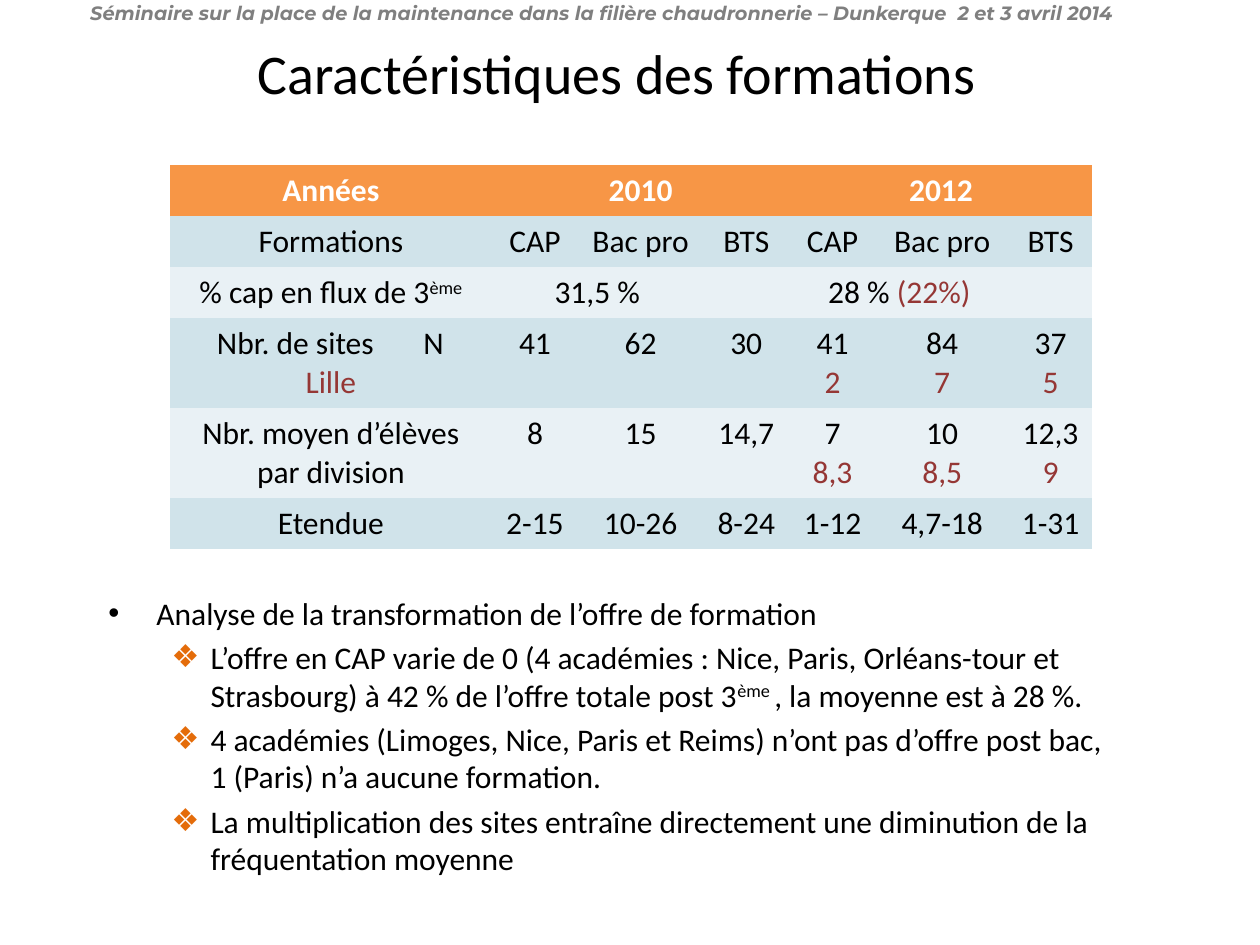
from dataclasses import dataclass

from lxml import etree
from pptx import Presentation
from pptx.dml.color import RGBColor
from pptx.enum.text import MSO_ANCHOR, MSO_AUTO_SIZE, PP_ALIGN
from pptx.oxml.ns import qn
from pptx.util import Cm, Pt

CENTER, LEFT = PP_ALIGN.CENTER, PP_ALIGN.LEFT
TOP, MIDDLE = MSO_ANCHOR.TOP, MSO_ANCHOR.MIDDLE
FIXED = MSO_AUTO_SIZE.NONE
PLAIN_TABLE = "{2D5ABB26-0587-4C30-8999-92F81FD0307C}"

BLACK, WHITE, GREY = "000000", "FFFFFF", "7F7F7F"
RED, ORANGE, BULLET_ORANGE = "953735", "F79646", "E46C0A"
BANDS = ["D0E3EA", "E9F1F5"]


def color(value):
    return RGBColor.from_string(value)


def place(shape, left, top, width, height):
    shape.left, shape.top = Cm(left), Cm(top)
    shape.width, shape.height = Cm(width), Cm(height)


@dataclass
class Span:
    text: str
    color: str = BLACK
    raised: bool = False


@dataclass
class SlideBuilder:
    slide: object
    font: str = "Calibri"
    size: float = 18

    def add_span(self, para, span, size=None, font=None, bold=False, italic=False):
        run = para.add_run()
        run.text = span.text
        run.font.name = font or self.font
        run.font.size = Pt(size or self.size)
        run.font.bold, run.font.italic = bold, italic
        run.font.color.rgb = color(span.color)
        if span.raised:
            run.font._element.set("baseline", "30000")

    def add_banner(self, text, left, top, width, height):
        box = self.slide.shapes.add_textbox(Cm(left), Cm(top), Cm(width), Cm(height))
        box.text_frame.word_wrap = False
        self.add_span(box.text_frame.paragraphs[0], Span(text, GREY),
                      11, "Montserrat", bold=True, italic=True)

    def set_title(self, text, *position):
        title = self.slide.shapes.title
        place(title, *position)
        title.text_frame.auto_size = FIXED
        title.text_frame.vertical_anchor = MIDDLE
        para = title.text_frame.paragraphs[0]
        para.alignment = CENTER
        self.add_span(para, Span(text), 32)

    def set_bullet(self, para, char, margin, hang, bullet_color):
        properties = para._p.get_or_add_pPr()
        properties.set("marL", str(Cm(margin)))
        properties.set("indent", str(-Cm(hang)))
        holder = etree.SubElement(properties, qn("a:buClr"))
        etree.SubElement(holder, qn("a:srgbClr")).set("val", bullet_color)
        etree.SubElement(properties, qn("a:buFont")).set("typeface", "Arial")
        etree.SubElement(properties, qn("a:buChar")).set("char", char)

    def set_list(self, items, *position):
        """Fill the body; each item is a level and its spans."""
        body = self.slide.placeholders[1]
        place(body, *position)
        frame = body.text_frame
        frame.auto_size, frame.vertical_anchor = FIXED, TOP
        for index, (level, spans) in enumerate(items):
            para = frame.add_paragraph() if index else frame.paragraphs[0]
            para.level = level
            para.space_before = Pt(3.6 if index else 0)
            if level:
                self.set_bullet(para, "❖", 2.06, 0.79, BULLET_ORANGE)
            else:
                self.set_bullet(para, "•", 0.97, 0.97, BLACK)
            for span in spans:
                self.add_span(para, span)

    def set_tabs(self, para, stops):
        tabs = etree.SubElement(para._p.get_or_add_pPr(), qn("a:tabLst"))
        for stop in stops:
            etree.SubElement(tabs, qn("a:tab"), pos=str(Cm(stop)), algn="l")

    def fill_cell(self, cell, lines, fill, bold):
        cell.fill.solid()
        cell.fill.fore_color.rgb = color(fill)
        for index, spans in enumerate(lines):
            frame = cell.text_frame
            para = frame.add_paragraph() if index else frame.paragraphs[0]
            tabbed = "\t" in spans[0].text
            para.alignment = LEFT if tabbed else CENTER
            if tabbed:
                self.set_tabs(para, SITE_TABS)
            for span in spans:
                self.add_span(para, span, bold=bold)

    def add_table(self, rows, merges, left, top, widths, heights):
        """Draw rows of cells; a cell is a list of lines made of spans."""
        graphic = self.slide.shapes.add_table(
            len(rows), len(widths), Cm(left), Cm(top), Cm(sum(widths)), Cm(sum(heights)))
        table = graphic.table
        table.first_row = table.horz_banding = False
        next(graphic.element.iter(qn("a:tableStyleId"))).text = PLAIN_TABLE
        for column, width in zip(table.columns, widths):
            column.width = Cm(width)
        for row, height in zip(table.rows, heights):
            row.height = Cm(height)
        for row, first, last in merges:
            table.cell(row, first).merge(table.cell(row, last))
        for r, cells in enumerate(rows):
            fill = BANDS[(r - 1) % 2] if r else ORANGE
            for c, lines in enumerate(cells):
                self.fill_cell(table.cell(r, c), lines, fill, bold=r == 0)


def stacked(black, red=None):
    """A cell with a black line and, below it, an optional red one."""
    return [[Span(black)]] + ([[Span(red, RED)]] if red else [])


def header(text):
    return [[Span(text, WHITE)]]


EMPTY = []
SITE_TABS = [0.69, 4.85]
COLUMN_WIDTHS = [6.48, 1.75, 2.51, 1.75, 1.73, 2.69, 1.68]
ROW_HEIGHTS = [1.03, 1.03, 1.03, 1.81, 1.81, 1.03]
MERGES = [(0, 1, 3), (0, 4, 6), (2, 1, 2), (2, 4, 5)]
COURSES = ["CAP", "Bac pro", "BTS"]
RANGES = ["2-15", "10-26", "8-24", "1-12", "4,7-18", "1-31"]

ROWS = [
    [header("Années"), header("2010"), EMPTY, EMPTY, header("2012"), EMPTY, EMPTY],
    [stacked(text) for text in ["Formations"] + COURSES * 2],
    [[[Span("% cap en flux de 3"), Span("ème", raised=True)]],
     stacked("31,5 %"), EMPTY, EMPTY,
     [[Span("28 % "), Span("(22%)", RED)]], EMPTY, EMPTY],
    [stacked("\tNbr. de sites\tN", "Lille"), stacked("41"), stacked("62"), stacked("30"),
     stacked("41", "2"), stacked("84", "7"), stacked("37", "5")],
    [stacked("Nbr. moyen d’élèves par division"), stacked("8"), stacked("15"),
     stacked("14,7"), stacked("7", "8,3"), stacked("10", "8,5"), stacked("12,3", "9")],
    [stacked(text) for text in ["Etendue"] + RANGES],
]

ANALYSIS = [
    (0, [Span("Analyse de la transformation de l’offre de formation")]),
    (1, [Span("L’offre en CAP varie de 0 (4 académies : Nice, Paris, Orléans-tour et "
              "Strasbourg) à 42 % de l’offre totale post 3"),
         Span("ème ", raised=True), Span(", la moyenne est à 28 %.")]),
    (1, [Span("4 académies (Limoges, Nice, Paris et Reims) n’ont pas d’offre post bac, "
              "1 (Paris) n’a aucune formation.")]),
    (1, [Span("La multiplication des sites entraîne directement une diminution de la "
              "fréquentation moyenne")]),
]


def main():
    deck = Presentation()
    deck.slide_width, deck.slide_height = Cm(25.4), Cm(19.05)
    builder = SlideBuilder(deck.slides.add_slide(deck.slide_layouts[1]))
    builder.add_banner("Séminaire sur la place de la maintenance dans la filière "
                       "chaudronnerie – Dunkerque  2 et 3 avril 2014",
                       1.57, -0.1, 22.17, 0.74)
    builder.set_title("Caractéristiques des formations", 4.32, 0.38, 16.23, 2.16)
    builder.set_list(ANALYSIS, 1.93, 11.84, 20.85, 6.07)
    builder.add_table(ROWS, MERGES, 3.43, 3.33, COLUMN_WIDTHS, ROW_HEIGHTS)
    deck.save("out.pptx")


if __name__ == "__main__":
    main()
